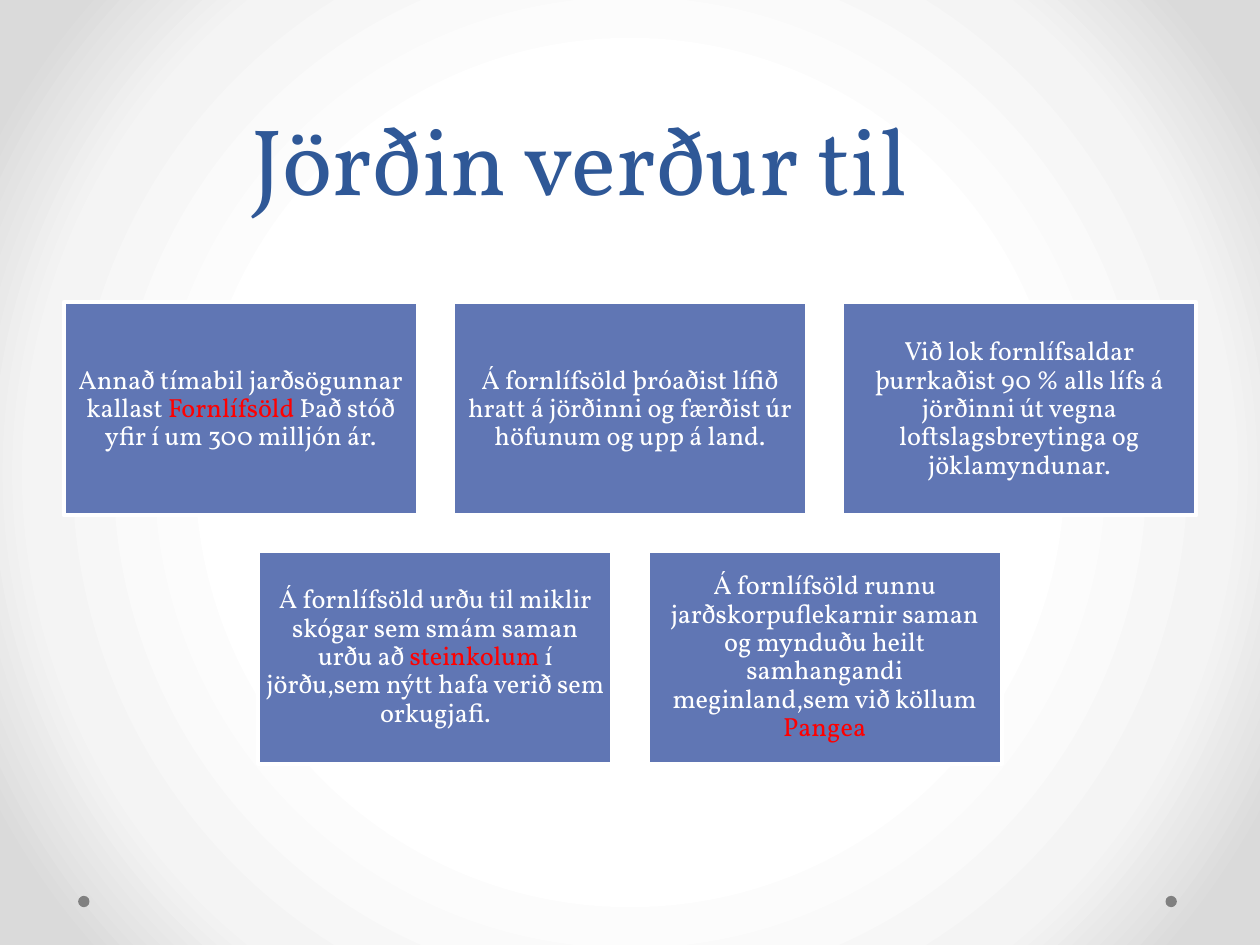
"""Build the slide about the Palaeozoic era: a title above two centred rows of boxes."""
from pptx import Presentation
from pptx import oxml, util as u
from pptx.dml.color import RGBColor
from pptx.enum import shapes, text

THEME = {
    "font": "Vollkorn", "title_size": 54, "title_line": 58, "body_size": 15,
    "title": "2F5897", "box": "6076B4", "text": "FFFFFF", "accent": "FF0000",
    "dot": "808080", "backdrop": [(50, "FFFFFF"), (76, "F4F4F4"), (92, "DADADA")],
}
W, H, GAP, TOP = 2.81, 1.69, 0.28, 2.4
ROWS = [
    [
        [("Annað tímabil jarðsögunnar kallast ", "text"), ("Fornlífsöld ", "accent"),
         ("Það stóð yfir í um 300 milljón ár.", "text")],
        [("Á fornlífsöld þróaðist lífið hratt á jörðinni og færðist úr höfunum "
          "og upp á land.", "text")],
        [("Við lok fornlífsaldar þurrkaðist 90 % alls lífs á jörðinni út vegna "
          "loftslagsbreytinga og jöklamyndunar.", "text")],
    ],
    [
        [("Á fornlífsöld urðu til miklir skógar sem smám saman urðu að ", "text"),
         ("steinkolum", "accent"),
         (" í jörðu,sem nýtt hafa verið sem orkugjafi.", "text")],
        [("Á fornlífsöld runnu jarðskorpuflekarnir saman og mynduðu heilt samhangandi "
          "meginland,sem við köllum ", "text"), ("Pangea", "accent")],
    ],
]


def add_shape(s, kind, x, y, w, h, fill):
    sp = s.shapes.add_shape(kind, *map(u.Inches, (x, y, w, h)))
    sp.shadow.inherit = False
    sp.fill.solid()
    sp.fill.fore_color.rgb = RGBColor.from_string(THEME[fill])
    sp.line.fill.background()
    return sp


def add_run(p, words, size, color):
    r = p.add_run()
    r.text = words
    for name, value in {"name": THEME["font"], "size": u.Pt(THEME[size])}.items():
        setattr(r.font, name, value)
    r.font.color.rgb = RGBColor.from_string(THEME[color])


prs = Presentation()
prs.slide_width, prs.slide_height = u.Inches(10), u.Inches(7.5)
s = prs.slides.add_slide(prs.slide_layouts[5])

s.background.fill.gradient()
grad = s.background._cSld.xpath("p:bg/p:bgPr/a:gradFill")[0]
stops = "".join(f'<a:gs pos="{pos * 1000}"><a:srgbClr val="{color}"/></a:gs>'
                for pos, color in THEME["backdrop"])
grad.getparent().replace(grad, oxml.parse_xml(
    f'<a:gradFill {oxml.ns.nsdecls("a")} rotWithShape="1"><a:gsLst>{stops}</a:gsLst>'
    '<a:path path="circle"><a:fillToRect l="50000" t="50000" r="50000" b="50000"/></a:path>'
    '</a:gradFill>'))

for x in (9.25, 0.62):
    add_shape(s, shapes.MSO_SHAPE.OVAL, x, 7.11, 0.09, 0.09, "dot")

sp = s.shapes.title
for name, value in {"left": 0.5, "top": 0, "width": 9, "height": 1.75}.items():
    setattr(sp, name, u.Inches(value))
tf = sp.text_frame
for name, value in {"auto_size": text.MSO_AUTO_SIZE.NONE, "word_wrap": True,
                    "vertical_anchor": text.MSO_ANCHOR.BOTTOM,
                    "margin_right": u.Inches(0.9)}.items():
    setattr(tf, name, value)
p = tf.paragraphs[0]
p.alignment = text.PP_ALIGN.CENTER
p.line_spacing = u.Pt(THEME["title_line"])
add_run(p, "Jörðin verður til", "title_size", "title")

box_format = {"word_wrap": True, "vertical_anchor": text.MSO_ANCHOR.MIDDLE}
box_format.update({f"margin_{side}": u.Inches(0.06)
                   for side in ("left", "top", "right", "bottom")})
for i, row in enumerate(ROWS):
    left = (10 - len(row) * W - (len(row) - 1) * GAP) / 2
    for j, runs in enumerate(row):
        sp = add_shape(s, shapes.MSO_SHAPE.RECTANGLE, left + j * (W + GAP),
                       TOP + i * (H + GAP), W, H, "box")
        sp.line.color.rgb = RGBColor.from_string(THEME["text"])
        sp.line.width = u.Pt(2.25)
        tf = sp.text_frame
        for name, value in box_format.items():
            setattr(tf, name, value)
        p = tf.paragraphs[0]
        p.alignment = text.PP_ALIGN.CENTER
        p.line_spacing = 0.9
        for words, color in runs:
            add_run(p, words, "body_size", color)

prs.save("out.pptx")
